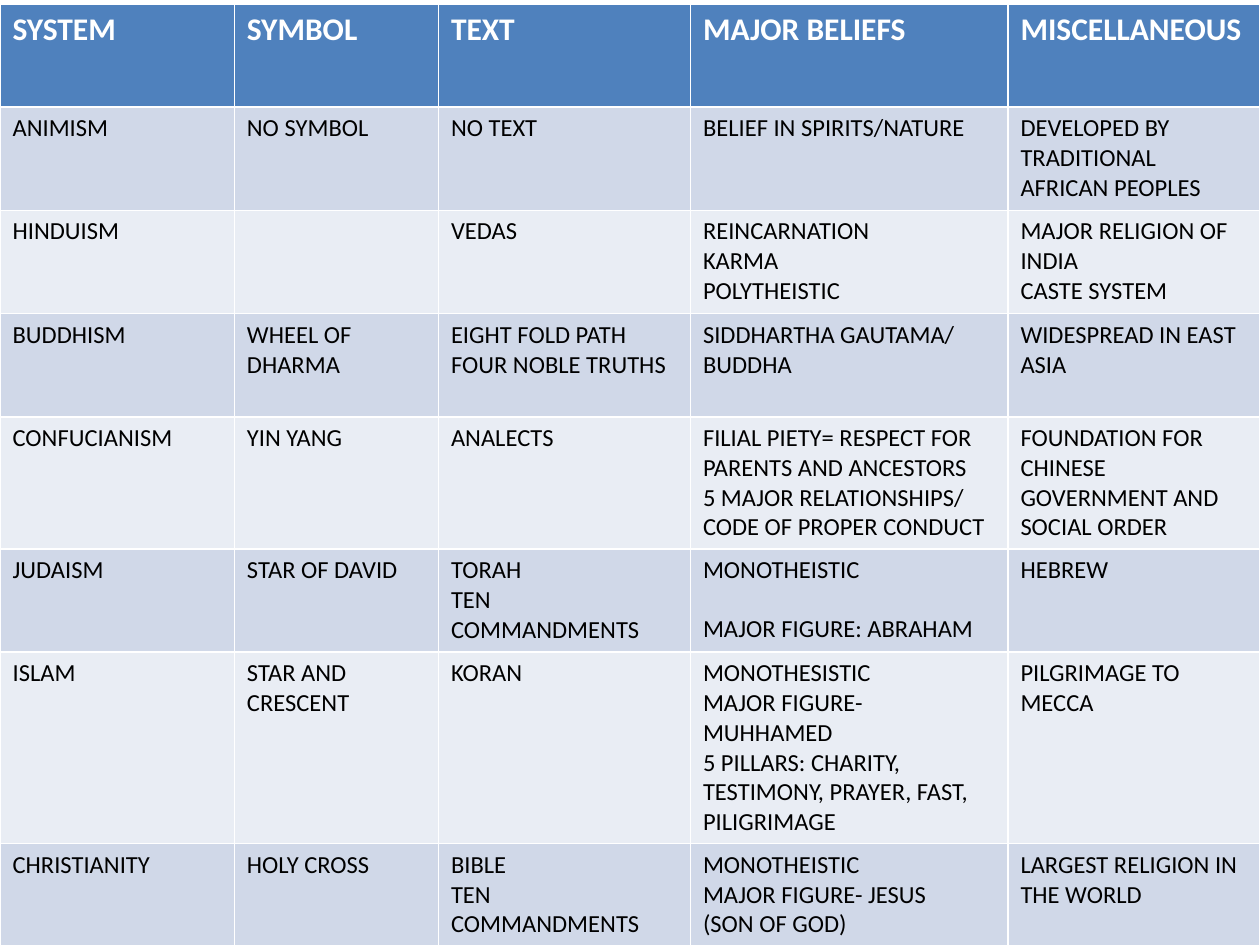
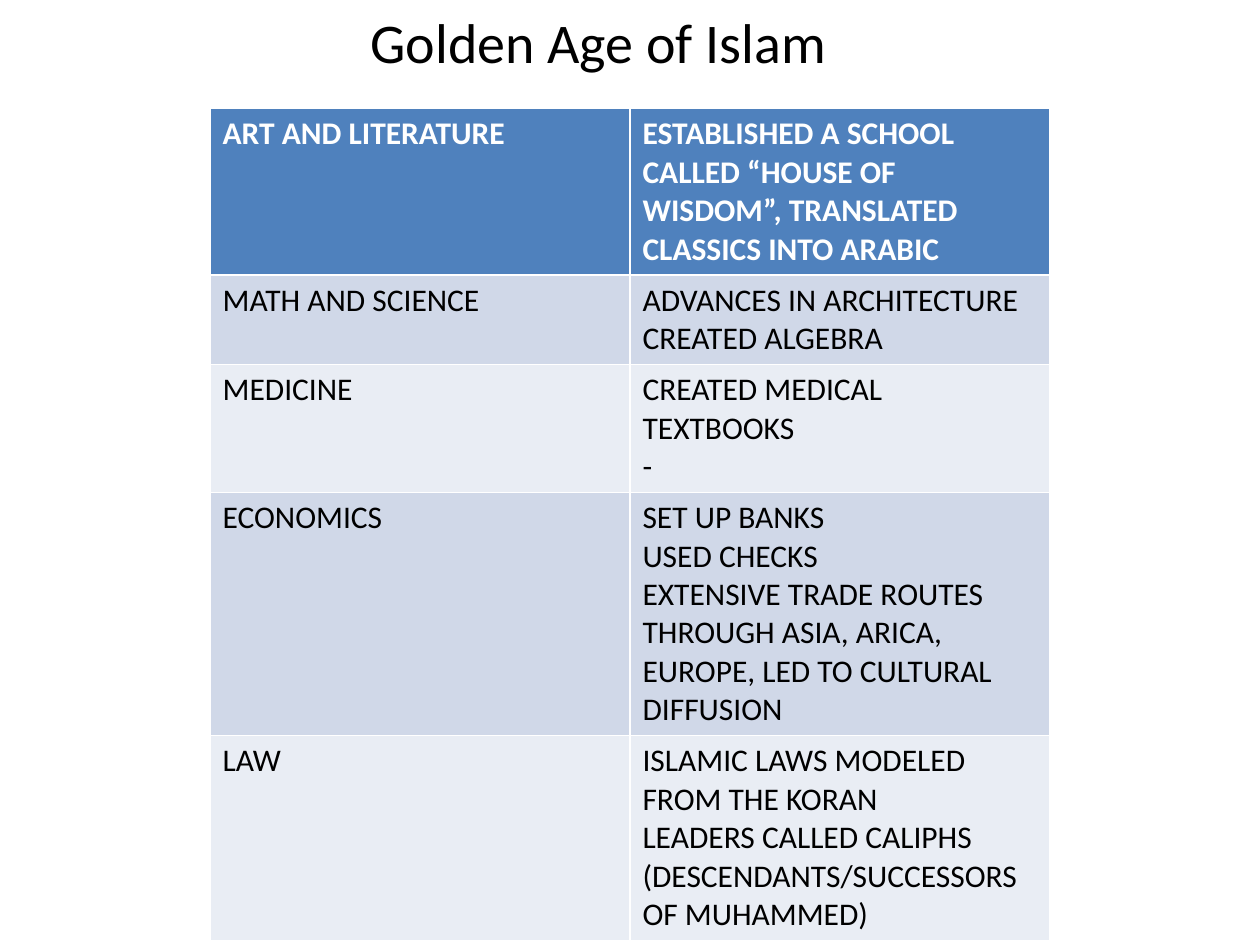
from pptx import Presentation
from pptx.dml.color import RGBColor
from pptx.enum import text
from pptx.util import Inches, Pt

SLIDE_WIDTH, SLIDE_HEIGHT = Inches(10), Inches(7.5)
TITLE_ONLY, BLANK = 5, 6

# Shared look
FONT = "Calibri"
BLACK, WHITE = "000000", "FFFFFF"
HEADER_FILL = "4F81BD"
BAND_FILLS = ("D0D8E8", "E9EDF4")
HEADER_FORMAT = {"name": FONT, "size": Pt(18), "bold": True}
TITLE_FORMAT = {"name": FONT, "size": Pt(32), "bold": False}

# Table wording: "\n" starts a paragraph, "\n\n" leaves a line's gap above it
BELIEF_SYSTEMS = [
    ["SYSTEM", "SYMBOL", "TEXT", "MAJOR BELIEFS", "MISCELLANEOUS"],
    ["ANIMISM", "NO SYMBOL", "NO TEXT", "BELIEF IN SPIRITS/NATURE",
     "DEVELOPED BY TRADITIONAL AFRICAN PEOPLES"],
    ["HINDUISM", "", "VEDAS", "REINCARNATION\nKARMA\nPOLYTHEISTIC",
     "MAJOR RELIGION OF INDIA\nCASTE SYSTEM"],
    ["BUDDHISM", "WHEEL OF DHARMA", "EIGHT FOLD PATH\nFOUR NOBLE TRUTHS",
     "SIDDHARTHA GAUTAMA/ BUDDHA", "WIDESPREAD IN EAST ASIA"],
    ["CONFUCIANISM", "YIN YANG", "ANALECTS",
     "FILIAL PIETY= RESPECT FOR PARENTS AND ANCESTORS\n"
     "5 MAJOR RELATIONSHIPS/ CODE OF PROPER CONDUCT",
     "FOUNDATION FOR CHINESE GOVERNMENT AND SOCIAL ORDER"],
    ["JUDAISM", "STAR OF DAVID", "TORAH\nTEN COMMANDMENTS",
     "MONOTHEISTIC\n\nMAJOR FIGURE: ABRAHAM", "HEBREW"],
    ["ISLAM", "STAR AND CRESCENT", "KORAN",
     "MONOTHESISTIC\nMAJOR FIGURE- MUHHAMED\n"
     "5 PILLARS: CHARITY, TESTIMONY, PRAYER, FAST, PILIGRIMAGE",
     "PILGRIMAGE TO MECCA"],
    ["CHRISTIANITY", "HOLY CROSS", "BIBLE\nTEN COMMANDMENTS",
     "MONOTHEISTIC\nMAJOR FIGURE- JESUS\n(SON OF GOD)",
     "LARGEST RELIGION IN THE WORLD"],
]
GOLDEN_AGE = [
    ["ART AND LITERATURE",
     "ESTABLISHED A SCHOOL CALLED “HOUSE OF WISDOM”, "
     "TRANSLATED CLASSICS INTO ARABIC"],
    ["MATH AND SCIENCE", "ADVANCES IN ARCHITECTURE\nCREATED ALGEBRA"],
    ["MEDICINE", "CREATED MEDICAL TEXTBOOKS\n-"],
    ["ECONOMICS",
     "SET UP BANKS\nUSED CHECKS\nEXTENSIVE TRADE ROUTES THROUGH ASIA, "
     "ARICA, EUROPE, LED TO CULTURAL DIFFUSION"],
    ["LAW",
     "ISLAMIC LAWS MODELED FROM THE KORAN\n"
     "LEADERS CALLED CALIPHS (DESCENDANTS/SUCCESSORS OF MUHAMMED)"],
]


def color(hex_string):
    return RGBColor.from_string(hex_string)


def across(percent):
    return round(SLIDE_WIDTH * percent / 100)


def down(percent):
    return round(SLIDE_HEIGHT * percent / 100)


def apply(target, values):
    for name, value in values.items():
        setattr(target, name, value)


def add_span(para, wording, font_format, hex_string):
    span = para.add_run()
    span.text = wording
    apply(span.font, font_format)
    span.font.color.rgb = color(hex_string)


def fill_cell(cell, wording, fill, font_format, hex_string):
    cell.fill.solid()
    cell.fill.fore_color.rgb = color(fill)
    frame = cell.text_frame
    for block_number, block in enumerate(wording.split("\n\n")):
        for line_number, line in enumerate(block.split("\n")):
            first = block_number == line_number == 0
            para = frame.paragraphs[0] if first else frame.add_paragraph()
            if block_number and not line_number:
                para.space_before = round(font_format["size"] * 1.2)
            if line:
                add_span(para, line, font_format, hex_string)


def add_banded_table(page, rows, box, column_shares, row_share, body_size):
    """Place a table; box is left, top, width, height in percent."""
    left, top, width, height = box
    frame = page.shapes.add_table(
        len(rows), len(column_shares), across(left), down(top),
        across(width), down(row_share * len(rows)))
    frame.height = down(height)
    table = frame.table
    for column, share in zip(table.columns, column_shares):
        column.width = across(share)
    body_format = {"name": FONT, "size": Pt(body_size), "bold": False}
    for row_number, row in enumerate(rows):
        if row_number == 0:
            style = HEADER_FILL, HEADER_FORMAT, WHITE
        else:
            style = BAND_FILLS[(row_number - 1) % 2], body_format, BLACK
        for column_number, wording in enumerate(row):
            fill_cell(table.cell(row_number, column_number), wording, *style)


def set_title(page, wording):
    title = page.shapes.title
    apply(title, {"left": across(5), "top": 0,
                  "width": across(85), "height": down(8.67)})
    frame = title.text_frame
    apply(frame, {"word_wrap": True,
                  "vertical_anchor": text.MSO_ANCHOR.MIDDLE})
    para = frame.paragraphs[0]
    para.alignment = text.PP_ALIGN.CENTER
    add_span(para, wording, TITLE_FORMAT, BLACK)


def main():
    deck = Presentation()
    apply(deck, {"slide_width": SLIDE_WIDTH, "slide_height": SLIDE_HEIGHT})

    # Belief systems
    page = deck.slides.add_slide(deck.slide_layouts[BLANK])
    add_banded_table(page, BELIEF_SYSTEMS, (0, 0.4, 100, 102.27),
                     (18.6, 16.2, 20, 25.2, 20), 10.93, 14)

    # Golden Age of Islam
    page = deck.slides.add_slide(deck.slide_layouts[TITLE_ONLY])
    set_title(page, "Golden Age of Islam")
    add_banded_table(page, GOLDEN_AGE, (16.67, 11.47, 66.67, 86.67),
                     (33.33, 33.33), 5.47, 18)

    deck.save("out.pptx")


if __name__ == "__main__":
    main()
